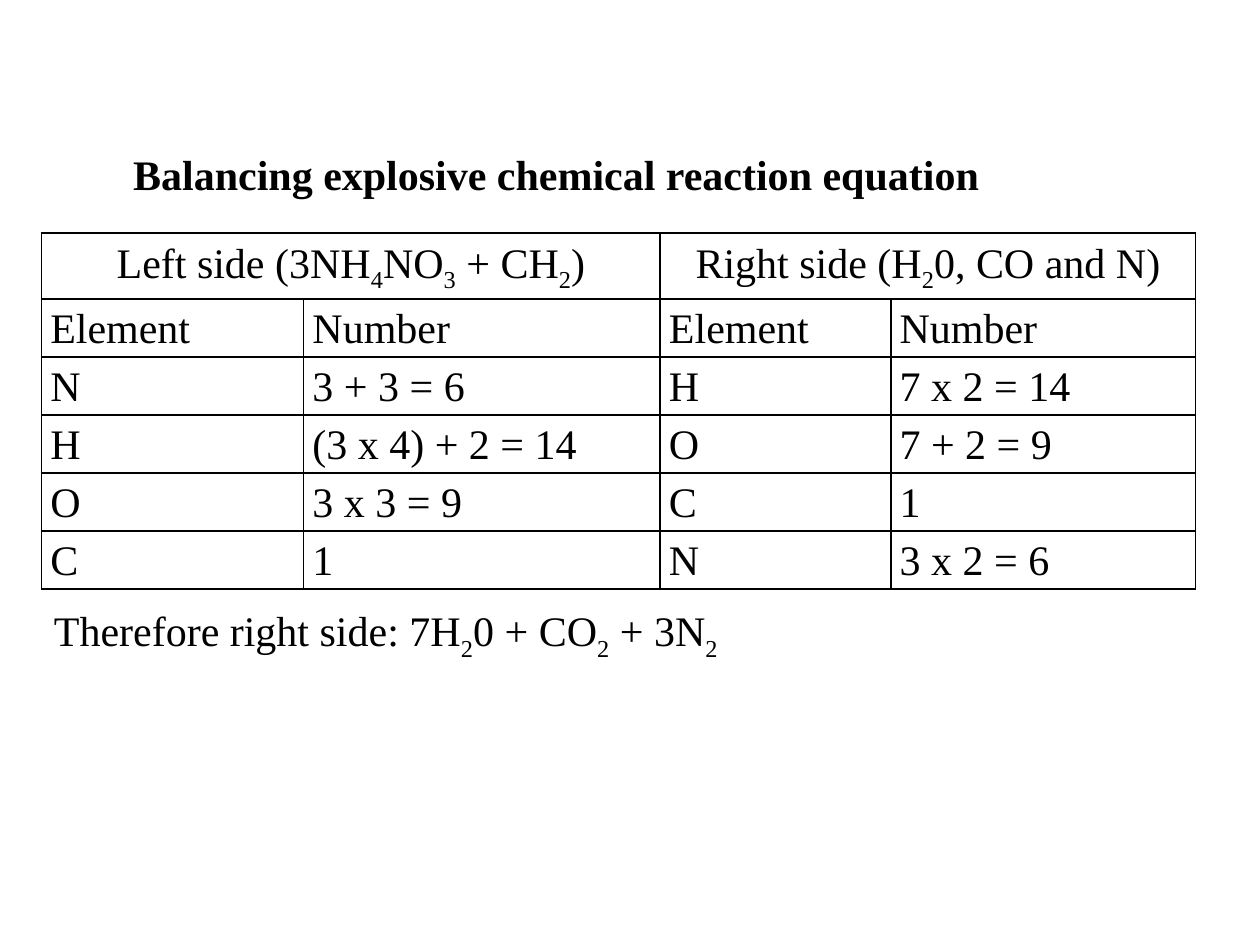
from lxml import etree
from pptx import Presentation
from pptx.dml.color import RGBColor
from pptx.enum.text import MSO_ANCHOR, PP_ALIGN
from pptx.oxml.ns import qn
from pptx.util import Inches, Pt

FONT = "Times New Roman"
INK = "000000"
HEADINGS = ["Left side (3NH_4NO_3 + CH_2)", "Right side (H_20, CO and N)"]
ROWS = [
    ["Element", "Number", "Element", "Number"],
    ["N", "3 + 3 = 6", "H", "7 x 2 = 14"],
    ["H", "(3 x 4) + 2 = 14", "O", "7 + 2 = 9"],
    ["O", "3 x 3 = 9", "C", "1"],
    ["C", "1", "N", "3 x 2 = 6"],
]
COLUMN_WIDTHS = [2.08, 2.83, 1.83, 2.42]
HEADING_HEIGHT, ROW_HEIGHT = 0.48, 0.42


def color(hex_text):
    return RGBColor.from_string(hex_text)


def write(paragraph, text, align=PP_ALIGN.LEFT, bold=False):
    """Write text in which an underscore makes the next character a subscript."""
    paragraph.alignment = align
    font = paragraph.font
    font.name, font.size, font.bold = FONT, Pt(24), bold
    font.color.rgb = color(INK)
    first, *rest = text.split("_")
    paragraph.add_run().text = first
    for part in rest:
        subscript = paragraph.add_run()
        subscript.text = part[0]
        subscript._r.get_or_add_rPr().set("baseline", "-25000")
        if part[1:]:
            paragraph.add_run().text = part[1:]


def add_line(slide, box, text, anchor=MSO_ANCHOR.TOP, **style):
    frame = slide.shapes.add_textbox(*map(Inches, box)).text_frame
    frame.word_wrap = True
    frame.vertical_anchor = anchor
    write(frame.paragraphs[0], text, **style)


def add_borders(cell):
    properties = cell._tc.get_or_add_tcPr()
    for index, side in enumerate(("lnL", "lnR", "lnT", "lnB")):
        line = etree.Element(qn(f"a:{side}"), w=str(Pt(1)))
        fill = etree.SubElement(line, qn("a:solidFill"))
        etree.SubElement(fill, qn("a:srgbClr"), val=INK)
        properties.insert(index, line)


def fill_cell(cell, text, align=PP_ALIGN.LEFT):
    paragraph = cell.text_frame.paragraphs[0]
    paragraph.line_spacing = 1.15
    write(paragraph, text, align)


def add_balance_table(slide, box):
    table = slide.shapes.add_table(
        len(ROWS) + 1, len(COLUMN_WIDTHS), *map(Inches, box)).table
    table.first_row = table.horz_banding = False
    for column, width in zip(table.columns, COLUMN_WIDTHS):
        column.width = Inches(width)
    for row in table.rows:
        row.height = Inches(ROW_HEIGHT)
    table.rows[0].height = Inches(HEADING_HEIGHT)

    for cell in table.iter_cells():
        cell.margin_left = cell.margin_right = Inches(0.07)
        cell.margin_top = cell.margin_bottom = 0
        cell.fill.background()
        add_borders(cell)

    # Each side of the equation spans two columns
    for side, heading in enumerate(HEADINGS):
        start = table.cell(0, 2 * side)
        start.merge(table.cell(0, 2 * side + 1))
        fill_cell(start, heading, PP_ALIGN.CENTER)

    # Element counts
    for row, values in enumerate(ROWS, start=1):
        for column, value in enumerate(values):
            fill_cell(table.cell(row, column), value)


def build_balancing_slide(presentation):
    slide = presentation.slides.add_slide(presentation.slide_layouts[6])
    # Title
    add_line(slide, (0.5, 1.08, 7.83, 0.59),
             "Balancing explosive chemical reaction equation",
             anchor=MSO_ANCHOR.MIDDLE, align=PP_ALIGN.CENTER, bold=True)
    # Atom counts of both sides
    table_height = HEADING_HEIGHT + ROW_HEIGHT * len(ROWS)
    add_balance_table(slide, (0.33, 1.85, sum(COLUMN_WIDTHS), table_height))
    # Conclusion
    add_line(slide, (0.33, 4.75, 5.75, 0.64),
             "Therefore right side: 7H_20 + CO_2 + 3N_2")


def main():
    presentation = Presentation()
    presentation.slide_width, presentation.slide_height = Inches(10), Inches(7.5)
    build_balancing_slide(presentation)
    presentation.save("out.pptx")


if __name__ == "__main__":
    main()
